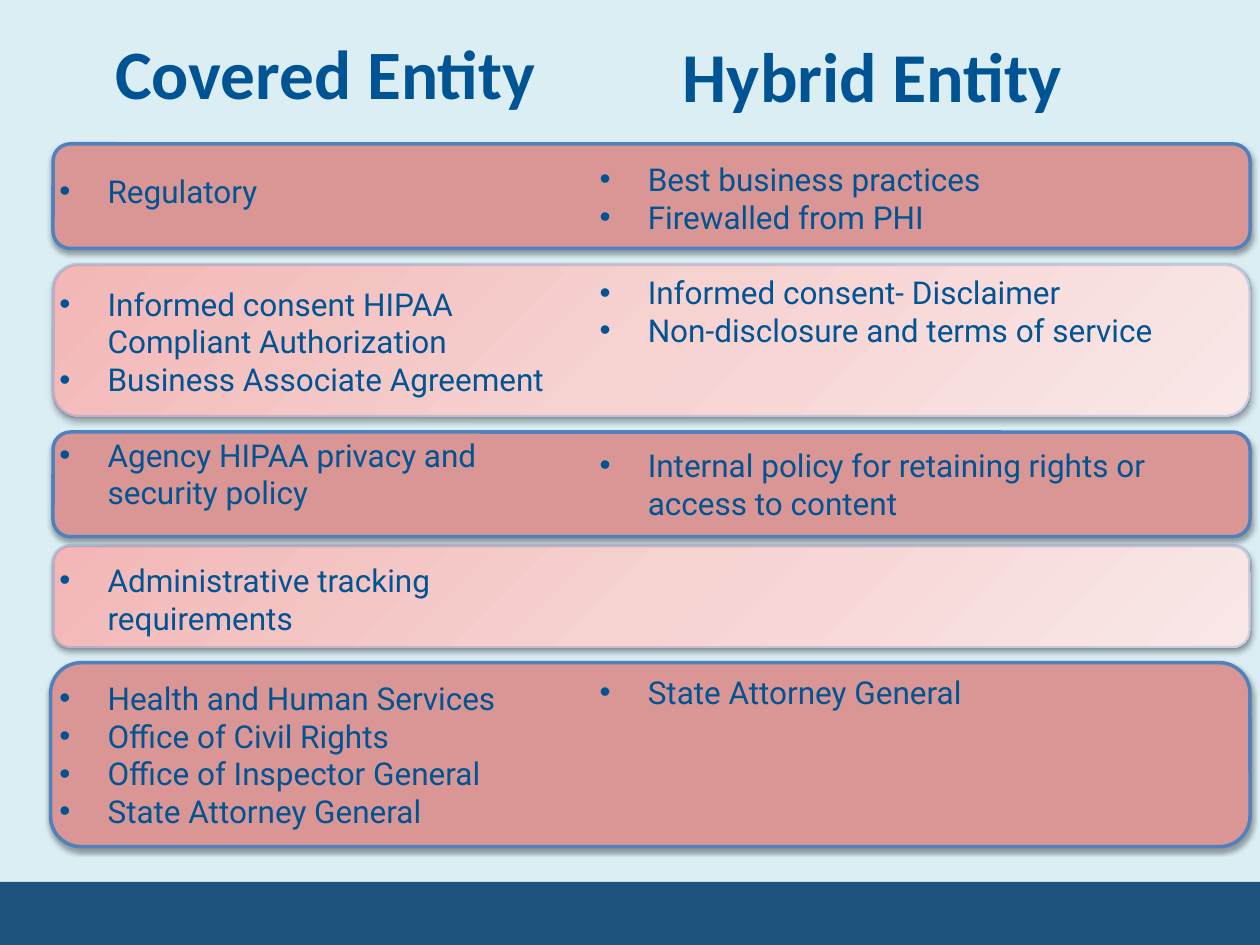
from lxml import etree
from pptx import Presentation
from pptx import util as u
from pptx.dml.color import RGBColor
from pptx.enum import shapes, text
from pptx.oxml import parse_xml
from pptx.oxml.ns import nsdecls, qn

PALE = RGBColor(0xDB, 0xEE, 0xF4)
NAVY = RGBColor(0x1E, 0x53, 0x7E)
ROSE = RGBColor(0xD9, 0x96, 0x94)
EDGE = RGBColor(0x4F, 0x81, 0xBD)
INK = RGBColor(0x00, 0x54, 0x93)
BLUSH = [(0, RGBColor(0xF2, 0xB7, 0xB6)), (50, RGBColor(0xF6, 0xD2, 0xD1)),
         (100, RGBColor(0xFA, 0xE8, 0xE8))]

CARDS = [(1.07, 2.9, 24.13, 2.11), (1.07, 5.33, 24.13, 3.07), (1.07, 8.71, 24.13, 2.11),
         (1.07, 11, 24.13, 2.06), (1.02, 13.36, 24.18, 3.71)]
COVERED = [
    (0, ["Regulatory"]),
    (43, ["Informed consent HIPAA Compliant Authorization", "Business Associate Agreement"]),
    (21.5, ["Agency HIPAA privacy and security policy"]),
    (28.5, ["Administrative tracking requirements"]),
    (24, ["Health and Human Services", "Office of Civil Rights",
          "Office of Inspector General", "State Attorney General"]),
]
HYBRID = [
    (0, ["Best business practices", "Firewalled from PHI"]),
    (21.5, ["Informed consent- Disclaimer", "Non-disclosure and terms of service"]),
    (55.5, ["Internal policy for retaining rights or access to content"]),
    (86.5, ["State Attorney General"]),
]


class Deck:
    """Holds the style and the current slide, and draws each kind of element."""

    def __init__(self, s, head_font="Calibri", body_font="Roboto"):
        self.s = s
        self.head_font = head_font
        self.body_font = body_font

    def background(self, color):
        fill = self.s.background.fill
        fill.solid()
        fill.fore_color.rgb = color

    def shape(self, kind, box, color):
        sp = self.s.shapes.add_shape(kind, *map(u.Cm, box))
        sp.shadow.inherit = False
        sp.fill.solid()
        sp.fill.fore_color.rgb = color
        return sp

    def band(self, box, color):
        self.shape(shapes.MSO_SHAPE.RECTANGLE, box, color).line.fill.background()

    def card(self, box, faded):
        sp = self.shape(shapes.MSO_SHAPE.ROUNDED_RECTANGLE, box, ROSE)
        sp.line.color.rgb = EDGE
        sp.line.width = u.Pt(2)
        spPr = sp._element.spPr
        if faded:
            stops = "".join(f'<a:gs pos="{pos * 1000}"><a:srgbClr val="{color}"/></a:gs>'
                            for pos, color in BLUSH)
            spPr.replace(spPr.find(qn("a:solidFill")), parse_xml(
                f'<a:gradFill {nsdecls("a")} rotWithShape="1"><a:gsLst>{stops}</a:gsLst>'
                '<a:lin ang="2700000" scaled="0"/></a:gradFill>'))
            line_color = spPr.find(qn("a:ln")).find(".//" + qn("a:srgbClr"))
            etree.SubElement(line_color, qn("a:alpha"), val="25000")
        spPr.find(qn("a:effectLst")).append(parse_xml(
            f'<a:outerShdw {nsdecls("a")} blurRad="{u.Pt(3)}" dist="{u.Pt(1.8)}" '
            'dir="5400000" rotWithShape="0"><a:srgbClr val="000000">'
            '<a:alpha val="35000"/></a:srgbClr></a:outerShdw>'))

    def textbox(self, box, anchor):
        tf = self.s.shapes.add_textbox(*map(u.Cm, box)).text_frame
        tf.word_wrap = True
        tf.vertical_anchor = anchor
        tf.margin_left = tf.margin_right = tf.margin_top = tf.margin_bottom = u.Cm(0.13)
        return tf

    def run(self, p, words, font, size, bold=False):
        r = p.add_run()
        r.text = words
        r.font.name = font
        r.font.size = u.Pt(size)
        r.font.bold = bold
        r.font.color.rgb = INK

    def heading(self, box, words, size):
        p = self.textbox(box, text.MSO_ANCHOR.MIDDLE).paragraphs[0]
        p.alignment = text.PP_ALIGN.CENTER
        self.run(p, words, self.head_font, size, bold=True)

    def bullets(self, box, groups):
        tf = self.textbox(box, text.MSO_ANCHOR.TOP)
        p = tf.paragraphs[0]
        for g, (gap, items) in enumerate(groups):
            for i, words in enumerate(items):
                if g or i:
                    p = tf.add_paragraph()
                pPr = p._p.get_or_add_pPr()
                pPr.set("marL", str(u.Cm(0.97)))
                pPr.set("indent", str(-u.Cm(0.97)))
                etree.SubElement(pPr, qn("a:buFont"), typeface="Arial")
                etree.SubElement(pPr, qn("a:buChar"), char="•")
                if gap and i == 0:
                    p.space_before = u.Pt(gap)
                self.run(p, words, self.body_font, 18)


def main():
    prs = Presentation()
    prs.slide_width, prs.slide_height = u.Cm(25.4), u.Cm(19.05)
    deck = Deck(prs.slides.add_slide(prs.slide_layouts[6]))
    deck.background(PALE)
    deck.band((0, 17.78, 25.4, 1.27), NAVY)
    for n, box in reversed(list(enumerate(CARDS))):
        deck.card(box, faded=n % 2 == 1)
    deck.heading((2.11, 0, 8.89, 2.9), "Covered Entity", 39.6)
    deck.heading((12.93, 0.06, 9.32, 2.9), "Hybrid Entity", 40)
    deck.bullets((1.07, 3.33, 11, 13.7), COVERED)
    deck.bullets((11.96, 3.1, 12.9, 12.32), HYBRID)
    prs.save("out.pptx")


if __name__ == "__main__":
    main()
